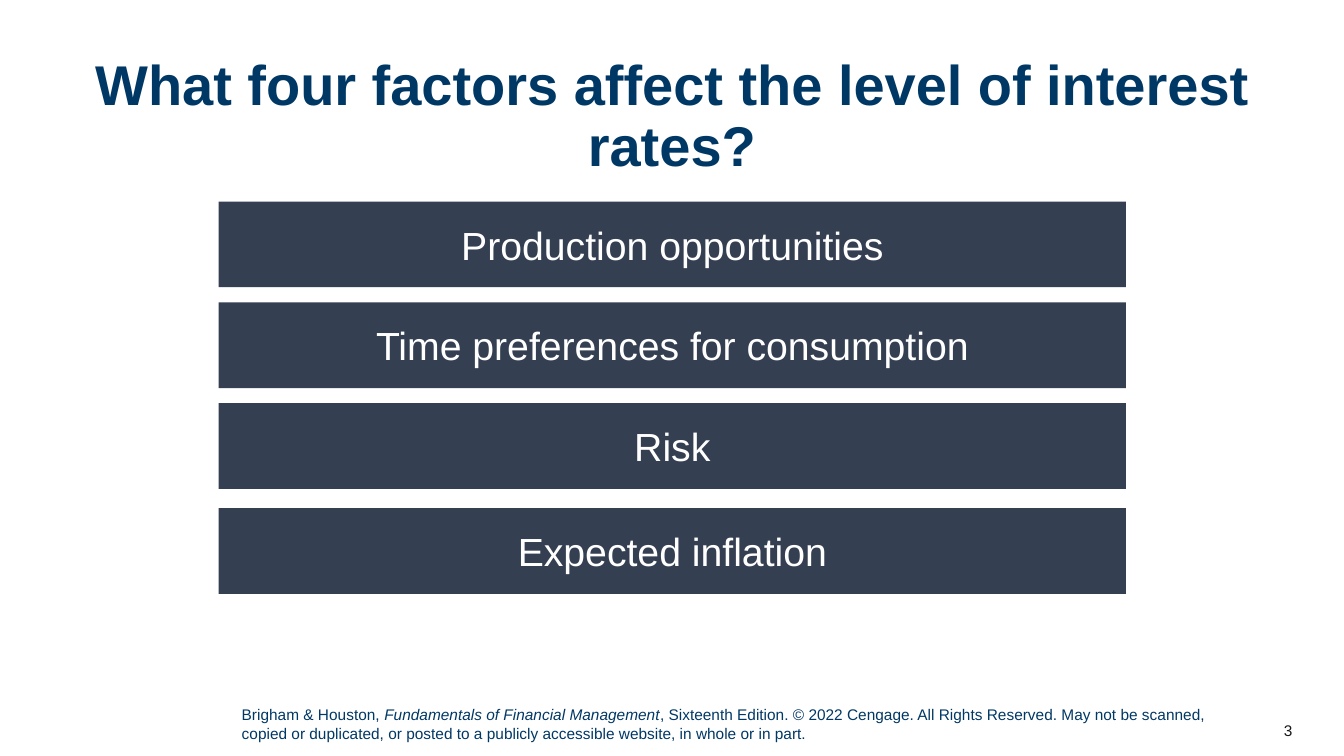
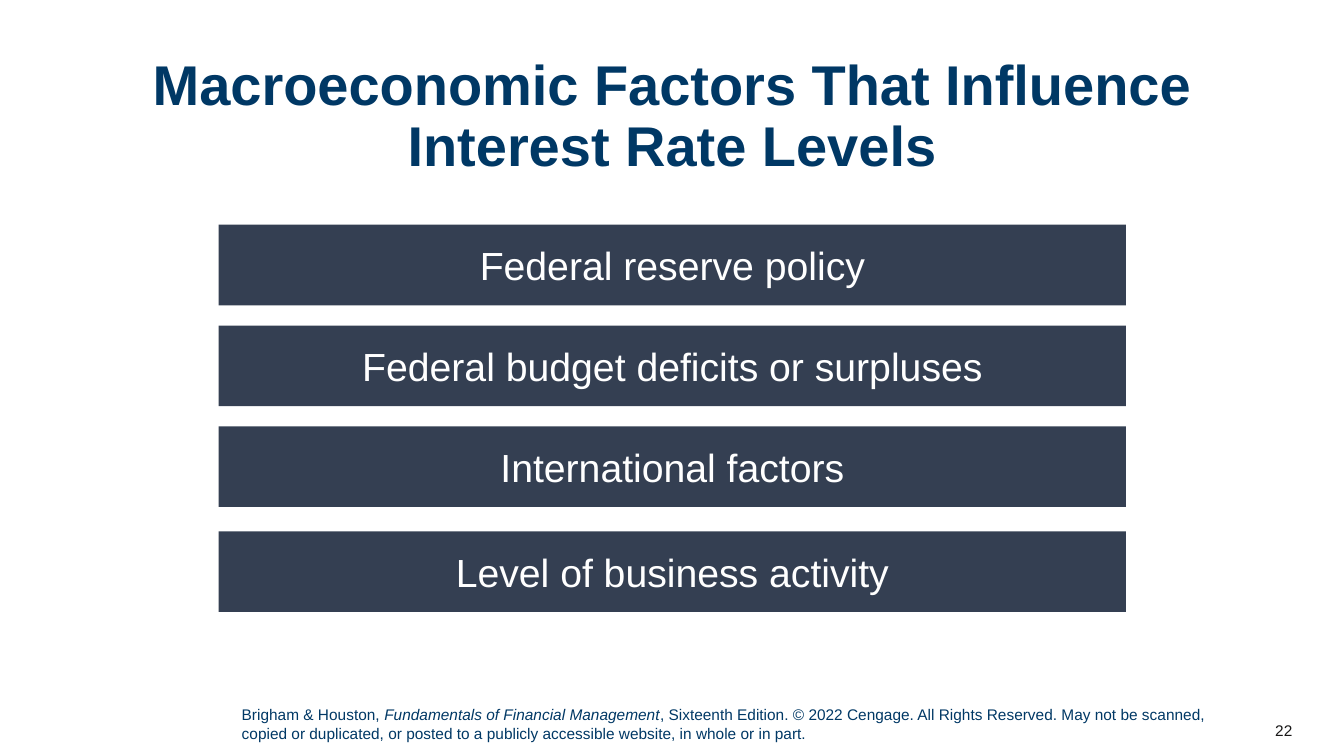
from dataclasses import dataclass

from pptx import Presentation
from pptx import util as u
from pptx.dml import color
from pptx.enum import shapes, text

Pt = u.Pt
Align = text.PP_ALIGN
Anchor = text.MSO_ANCHOR


@dataclass(frozen=True)
class Theme:
    face: str = "Arial"
    navy: str = "003865"
    slate: str = "343F52"
    white: str = "FFFFFF"
    ink: str = "181717"
    head: float = 40
    body: float = 28
    note: float = 11


@dataclass(frozen=True)
class Box:
    left: float
    top: float
    width: float
    height: float

    def size(self) -> tuple:
        return Pt(self.left), Pt(self.top), Pt(self.width), Pt(self.height)


@dataclass(frozen=True)
class Page:
    number: int
    title: str
    top: float
    height: float
    bars: tuple[str, ...]


THEME = Theme()
TITLE = Box(37.44, 37.44, 884.88, 95.76)
FOOTER = Box(165.6, 500.4, 705.6, 33.84)
NUMBER = Box(872.64, 507.6, 57.6, 28.8)
BAR_LEFT, BAR_WIDTH = 156.24, 648
STEPS = (0, 72, 144, 219)
CREDIT = (
    ("Brigham & Houston, ", False),
    ("Fundamentals of Financial Management", True),
    (", Sixteenth Edition. © 2022 Cengage. All Rights Reserved. "
     "May not be scanned, copied or duplicated, or posted to a publicly "
     "accessible website, in whole or in part.", False),
)
PAGES = (
    Page(3, "What four factors affect the level of interest rates?", 144, 61.2,
         ("Production opportunities", "Time preferences for consumption",
          "Risk", "Expected inflation")),
    Page(22, "Macroeconomic Factors That Influence Interest Rate Levels",
         160.56, 57.6,
         ("Federal reserve policy", "Federal budget deficits or surpluses",
          "International factors", "Level of business activity")),
)


def style(run, size: float, tint: str, bold: bool = False,
          slant: bool = False) -> None:
    font = run.font
    font.name, font.size = THEME.face, Pt(size)
    font.bold, font.italic = bold, slant
    font.color.rgb = color.RGBColor.from_string(tint)


def write(shape, words: str, size: float, tint: str, align: Align,
          anchor: Anchor, bold: bool = False) -> None:
    frame = shape.text_frame
    frame.word_wrap = True
    frame.vertical_anchor = anchor
    frame.text = words
    para = frame.paragraphs[0]
    para.alignment = align
    style(para.runs[0], size, tint, bold)


def add_title(slide, words: str) -> None:
    box = slide.shapes.add_textbox(*TITLE.size())
    write(box, words, THEME.head, THEME.navy, Align.CENTER, Anchor.TOP, True)
    box.text_frame.paragraphs[0].line_spacing = 0.9


def add_bar(slide, words: str, place: Box) -> None:
    bar = slide.shapes.add_shape(shapes.MSO_SHAPE.RECTANGLE, *place.size())
    bar.shadow.inherit = False
    bar.fill.solid()
    bar.fill.fore_color.rgb = color.RGBColor.from_string(THEME.slate)
    bar.line.fill.background()
    write(bar, words, THEME.body, THEME.white, Align.CENTER, Anchor.MIDDLE)


def add_footer(slide, number: int) -> None:
    box = slide.shapes.add_textbox(*NUMBER.size())
    write(box, str(number), THEME.note, THEME.ink, Align.RIGHT, Anchor.MIDDLE)
    frame = slide.shapes.add_textbox(*FOOTER.size()).text_frame
    frame.word_wrap = True
    for words, slant in CREDIT:
        run = frame.paragraphs[0].add_run()
        run.text = words
        style(run, THEME.note, THEME.navy, slant=slant)


def add_page(deck, page: Page) -> None:
    slide = deck.slides.add_slide(deck.slide_layouts[6])
    add_footer(slide, page.number)
    add_title(slide, page.title)
    for step, words in zip(STEPS, page.bars):
        place = Box(BAR_LEFT, page.top + step, BAR_WIDTH, page.height)
        add_bar(slide, words, place)


def main() -> None:
    deck = Presentation()
    deck.slide_width, deck.slide_height = Pt(960), Pt(540)
    for page in PAGES:
        add_page(deck, page)
    deck.save("out.pptx")


if __name__ == "__main__":
    main()
